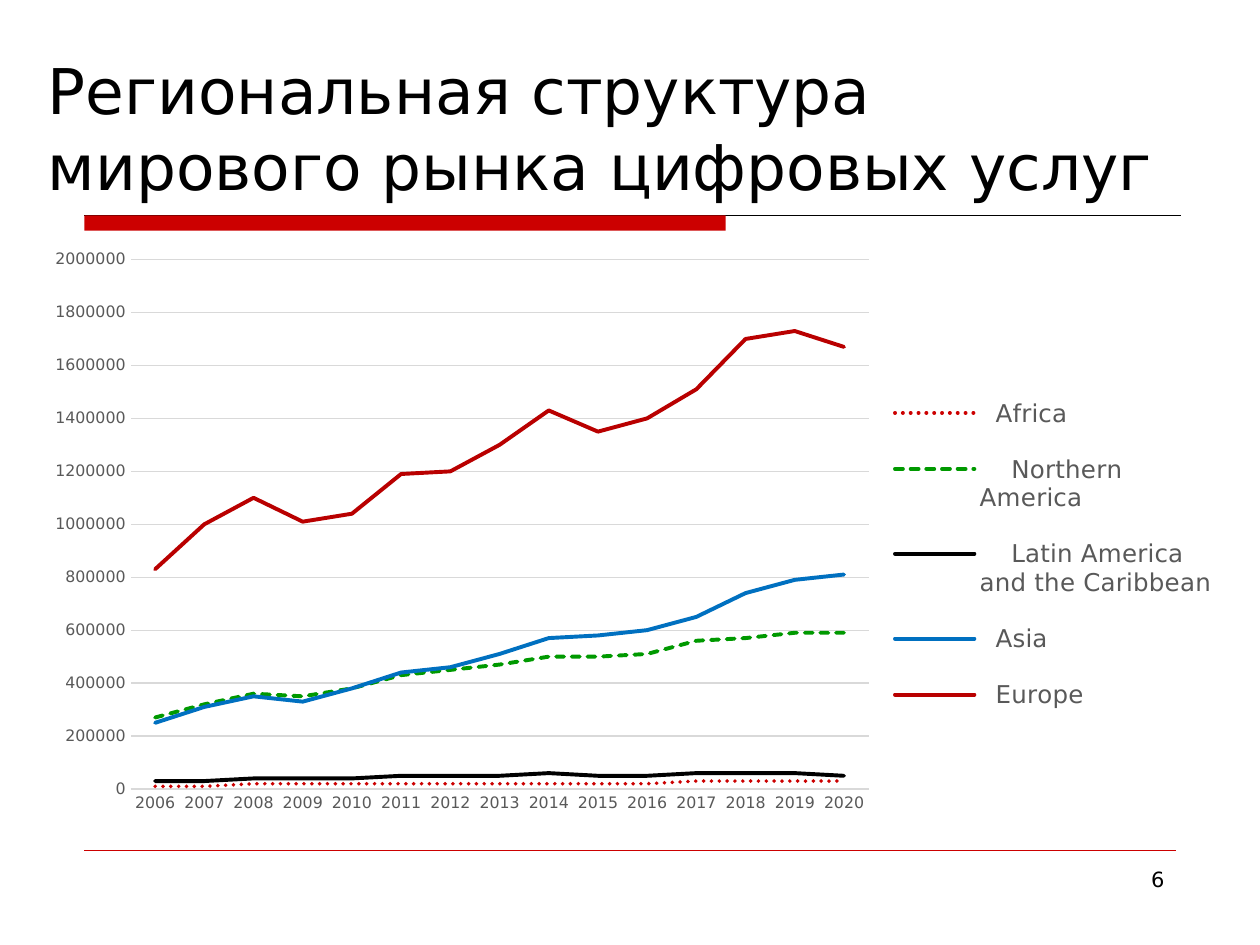
import pptx
import pptx.chart.data
import pptx.dml.color
import pptx.enum.chart
import pptx.enum.dml
import pptx.enum.shapes
import pptx.enum.text
import pptx.oxml
import pptx.oxml.ns
import pptx.util

Inches = pptx.util.Inches
Pt = pptx.util.Pt
RGBColor = pptx.dml.color.RGBColor
DASH = pptx.enum.dml.MSO_LINE

FONT = "DejaVu Sans"
RED = RGBColor(0xCC, 0x00, 0x00)
DARK_RED = RGBColor(0xB9, 0x00, 0x00)
GREEN = RGBColor(0x00, 0x99, 0x00)
BLUE = RGBColor(0x00, 0x70, 0xC0)
BLACK = RGBColor(0x00, 0x00, 0x00)
LABEL_GREY = RGBColor(0x59, 0x59, 0x59)
GRID_GREY = RGBColor(0xD9, 0xD9, 0xD9)

# Name, colour, dash, values in thousands
REGIONS = [
    ("  Africa", RED, DASH.ROUND_DOT,
     [10, 10, 20, 20, 20, 20, 20, 20, 20, 20, 20, 30, 30, 30, 30]),
    ("    Northern America", GREEN, DASH.SQUARE_DOT,
     [270, 320, 360, 350, 380, 430, 450, 470, 500, 500, 510, 560, 570, 590, 590]),
    ("    Latin America and the Caribbean", BLACK, DASH.SOLID,
     [30, 30, 40, 40, 40, 50, 50, 50, 60, 50, 50, 60, 60, 60, 50]),
    ("  Asia", BLUE, DASH.SOLID,
     [250, 310, 350, 330, 380, 440, 460, 510, 570, 580, 600, 650, 740, 790, 810]),
    ("  Europe", DARK_RED, DASH.SOLID,
     [830, 1000, 1100, 1010, 1040, 1190, 1200, 1300, 1430, 1350, 1400, 1510,
      1700, 1730, 1670]),
]


def style_font(font, size, color):
    font.name = FONT
    font.size = Pt(size)
    font.color.rgb = color


def manual_layout(x, y, w, h, target=""):
    """Return a c:layout element with positions as fractions of the chart."""
    return pptx.oxml.parse_xml(
        f'<c:layout {pptx.oxml.ns.nsdecls("c")}><c:manualLayout>{target}'
        '<c:xMode val="edge"/><c:yMode val="edge"/>'
        f'<c:x val="{x}"/><c:y val="{y}"/><c:w val="{w}"/><c:h val="{h}"/>'
        '</c:manualLayout></c:layout>')


prs = pptx.Presentation()
prs.slide_width = Inches(10)
prs.slide_height = Inches(7.5)
slide = prs.slides.add_slide(prs.slide_layouts[5])
shapes = slide.shapes

# Title
title = shapes.title
title.left, title.top = Inches(0.28), Inches(0.33)
title.width, title.height = Inches(9.37), Inches(1.33)
title.text_frame.text = "Региональная структура мирового рынка цифровых услуг"
title.text_frame.word_wrap = True
title.text_frame.auto_size = pptx.enum.text.MSO_AUTO_SIZE.NONE
title.text_frame.vertical_anchor = pptx.enum.text.MSO_ANCHOR.BOTTOM
heading = title.text_frame.paragraphs[0]
heading.alignment = pptx.enum.text.PP_ALIGN.LEFT
style_font(heading.font, 36, BLACK)

# Rules under the title and above the page number
for y, right, color, weight in [(1.71, 9.37, BLACK, 0.75), (6.75, 9.33, RED, 0.25)]:
    rule = shapes.add_connector(pptx.enum.shapes.MSO_CONNECTOR.STRAIGHT,
                                Inches(0.67), Inches(y), Inches(right), Inches(y))
    rule.line.color.rgb = color
    rule.line.width = Pt(weight)
    rule.element.spPr.append(
        pptx.oxml.parse_xml(f'<a:effectLst {pptx.oxml.ns.nsdecls("a")}/>'))

title_bar = shapes.add_shape(pptx.enum.shapes.MSO_SHAPE.RECTANGLE,
                             Inches(0.67), Inches(1.71), Inches(5.09), Inches(0.12))
title_bar.shadow.inherit = False
title_bar.fill.solid()
title_bar.fill.fore_color.rgb = RED
title_bar.line.fill.background()

# Page number
page_number = shapes.add_textbox(Inches(7.17), Inches(6.83), Inches(2.17), Inches(0.52))
page_number.text_frame.word_wrap = True
page_number.text_frame.text = "6"
number = page_number.text_frame.paragraphs[0]
number.alignment = pptx.enum.text.PP_ALIGN.RIGHT
style_font(number.font, 12, BLACK)

# Chart
market_data = pptx.chart.data.CategoryChartData(number_format="0")
market_data.categories = [str(year) for year in range(2006, 2021)]
for name, _, _, thousands in REGIONS:
    market_data.add_series(name, [value * 1000 for value in thousands])
chart = shapes.add_chart(pptx.enum.chart.XL_CHART_TYPE.LINE, Inches(0.28), Inches(1.92),
                         Inches(9.45), Inches(4.67), market_data).chart
chart.has_title = False
style_font(chart.font, 10, BLACK)
chart.plots[0].vary_by_categories = False

for series, (_, color, dash, _) in zip(chart.plots[0].series, REGIONS):
    series.smooth = False
    series.format.line.color.rgb = color
    series.format.line.width = Pt(2.25)
    series.format.line.dash_style = dash
for outline in chart.element.xpath(".//c:ser/c:spPr/a:ln"):
    outline.set("cap", "rnd")

years, values = chart.category_axis, chart.value_axis
for axis in (years, values):
    axis.major_tick_mark = axis.minor_tick_mark = pptx.enum.chart.XL_TICK_MARK.NONE
    style_font(axis.tick_labels.font, 9, LABEL_GREY)
values.minimum_scale, values.maximum_scale = 0, 2000000
values.major_unit = 200000
values.format.line.fill.background()
values.has_major_gridlines = True
for line in (years.format.line, values.major_gridlines.format.line):
    line.color.rgb = GRID_GREY
    line.width = Pt(0.75)

chart.has_legend = True
chart.legend.position = pptx.enum.chart.XL_LEGEND_POSITION.RIGHT
chart.legend.include_in_layout = False
style_font(chart.legend.font, 14, LABEL_GREY)

for old_layout in chart.element.xpath(".//c:plotArea/c:layout | .//c:legend/c:layout"):
    old_layout.getparent().remove(old_layout)
chart.element.xpath(".//c:plotArea")[0].insert(
    0, manual_layout(0.08, 0.03, 0.62, 0.9, '<c:layoutTarget val="inner"/>'))
chart.element.xpath(".//c:legendPos")[0].addnext(manual_layout(0.72, 0.22, 0.27, 0.62))

prs.save("out.pptx")
